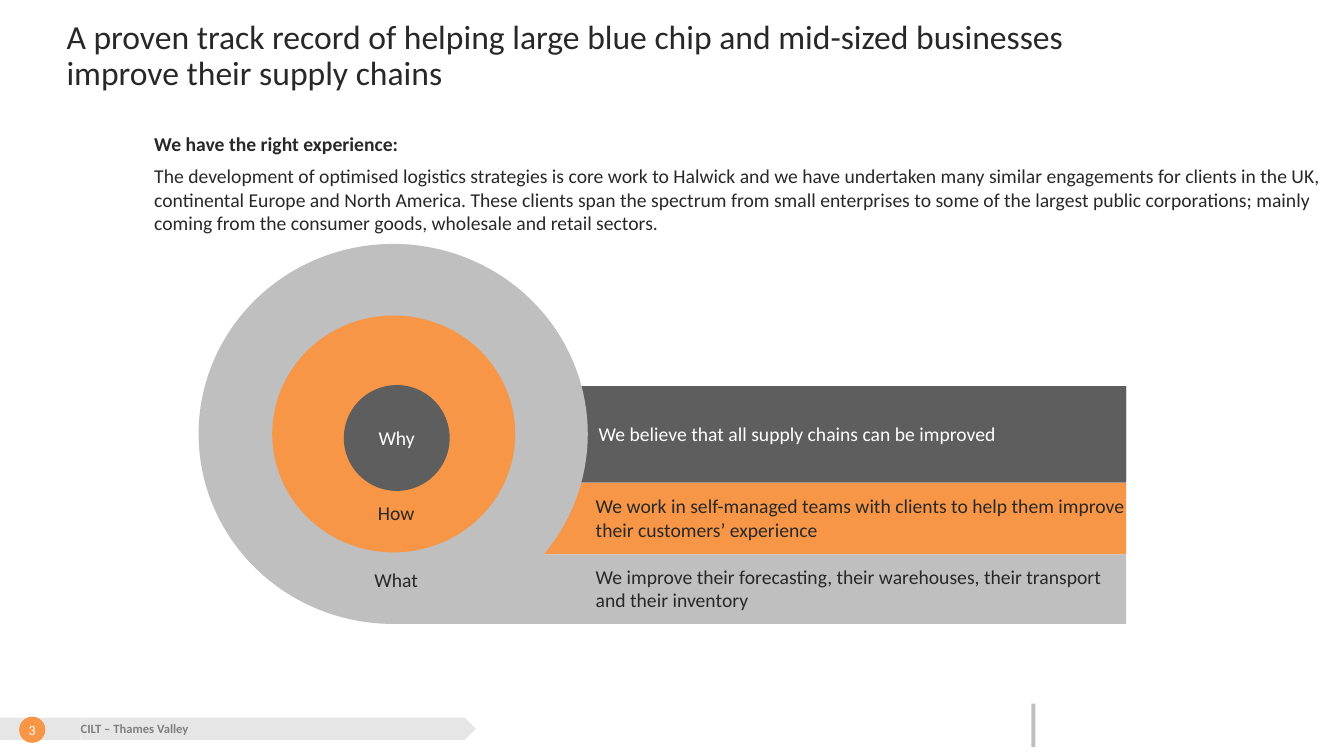
from dataclasses import dataclass
from pptx import Presentation
from pptx.dml.color import RGBColor
from pptx.enum.shapes import MSO_SHAPE
from pptx.enum.text import MSO_ANCHOR, MSO_AUTO_SIZE, PP_ALIGN
from pptx.util import Inches, Pt

RECT, OVAL, PLATE = MSO_SHAPE.RECTANGLE, MSO_SHAPE.OVAL, MSO_SHAPE.PENTAGON
TOP, MIDDLE = MSO_ANCHOR.TOP, MSO_ANCHOR.MIDDLE
LEFT, CENTER = PP_ALIGN.LEFT, PP_ALIGN.CENTER
FIXED = MSO_AUTO_SIZE.NONE


@dataclass(frozen=True)
class Theme:
    font: str = "Calibri"
    ink: str = "282828"
    white: str = "FFFFFF"
    dark: str = "5E5E5E"
    orange: str = "F79646"
    gray: str = "BFBFBF"
    pale: str = "E7E6E6"
    muted: str = "7F7F7F"
    title: int = 24
    body: int = 14
    page: int = 10
    foot: int = 9


THEME = Theme()


def style(para, size, color, bold=False, align=LEFT):
    para.alignment = align
    for run in para.runs:
        font = run.font
        font.name, font.size, font.bold = THEME.font, Pt(size), bold
        font.color.rgb = RGBColor.from_string(color)


def setup(frame, anchor=MIDDLE, inset=True):
    frame.word_wrap = True
    frame.auto_size = FIXED
    frame.vertical_anchor = anchor
    if not inset:
        frame.margin_left = frame.margin_right = 0
        frame.margin_top = frame.margin_bottom = 0


def write(item, text, color=THEME.ink, size=THEME.body, align=LEFT,
          bold=False, anchor=MIDDLE, inset=True):
    frame = item.text_frame
    setup(frame, anchor, inset)
    frame.text = text
    style(frame.paragraphs[0], size, color, bold, align)


def block(slide, kind, box, color):
    item = slide.shapes.add_shape(kind, *map(Inches, box))
    item.shadow.inherit = False
    item.fill.solid()
    item.fill.fore_color.rgb = RGBColor.from_string(color)
    item.line.fill.background()
    return item


def label(slide, box, text, **look):
    item = slide.shapes.add_textbox(*map(Inches, box))
    write(item, text, **look)


def footer(slide, box, text, page):
    x, y, w, h = box
    block(slide, RECT, (x + 10.23, y - 0.14, 0.04, 0.43), THEME.gray)
    block(slide, RECT, (x, y, 0.8, h), THEME.pale)
    block(slide, OVAL, (x + 0.19, y - 0.01, 0.26, 0.26), THEME.orange)
    plate = block(slide, PLATE, (x + 0.8, y, w - 0.8, h), THEME.pale)
    write(plate, text, THEME.muted, THEME.foot, bold=True, inset=False)
    plate.text_frame.word_wrap = False
    label(slide, (x + 0.09, y - 0.01, 0.46, 0.26), page,
          color=THEME.white, size=THEME.page, align=CENTER)


def heading(slide, box, text):
    title = slide.shapes.title
    title.left, title.top, title.width, title.height = map(Inches, box)
    write(title, text, size=THEME.title, anchor=TOP, inset=False)
    title.text_frame.paragraphs[0].line_spacing = 0.9


def intro(slide, box, lead, text):
    frame = slide.shapes.add_textbox(*map(Inches, box)).text_frame
    setup(frame, TOP, inset=False)
    frame.text = lead
    style(frame.paragraphs[0], THEME.body, THEME.ink, bold=True)
    para = frame.add_paragraph()
    para.text = text
    para.space_before = Pt(6)
    style(para, THEME.body, THEME.ink)


def circles(slide, box, rows):
    x, y, w, h = box
    start = x + 1.93
    tops = (1.41, 2.37, 3.08, h)
    fills = (THEME.dark, THEME.orange, THEME.gray)
    bands = list(zip(tops, tops[1:], fills))
    for top, end, fill in bands:
        block(slide, RECT, (start, y + top, x + w - start, end - top), fill)

    rings = ((0, 0, 3.86, h), (0.73, 0.71, 2.41, 2.35), (1.44, 1.4, 1.05, 1.05))
    for (dx, dy, wide, high), fill in zip(rings, reversed(fills)):
        core = block(slide, OVAL, (x + dx, y + dy, wide, high), fill)

    names, lines = zip(*rows)
    write(core, names[0], THEME.white, align=CENTER)
    for name, dy in zip(names[1:], (2.5, 3.16)):
        label(slide, (x + 1.41, y + dy, 1.1, 0.48), name,
              align=CENTER, anchor=TOP)

    panel = block(slide, RECT, (x + 3.87, y + tops[0], w - 3.87, 0.94), THEME.dark)
    write(panel, lines[0], THEME.white)
    for line, (top, end, fill) in zip(lines[1:], bands[1:]):
        label(slide, (x + 3.84, y + top - 0.01, 5.55, end - top), line)


def main():
    deck = Presentation()
    deck.slide_width, deck.slide_height = Inches(13.33), Inches(7.5)
    slide = deck.slides.add_slide(deck.slide_layouts[5])
    footer(slide, (0, 7.12, 4.72, 0.22), "CILT – Thames Valley", "3")
    heading(slide, (0.66, 0.2, 10.27, 0.76),
            "A proven track record of helping large blue chip and mid-sized "
            "businesses improve their supply chains")
    intro(slide, (1.53, 1.31, 11.8, 1.1), "We have the right experience:",
          "The development of optimised logistics strategies is core work to "
          "Halwick and we have undertaken many similar engagements for clients "
          "in the UK, continental Europe and North America. These clients span "
          "the spectrum from small enterprises to some of the largest public "
          "corporations; mainly coming from the consumer goods, wholesale and "
          "retail sectors.")
    circles(slide, (1.97, 2.42, 9.2, 3.77), (
        ("Why", "We believe that all supply chains can be improved"),
        ("How", "We work in self-managed teams with clients to help them "
                "improve their customers’ experience"),
        ("What", "We improve their forecasting, their warehouses, their "
                 "transport and their inventory"),
    ))
    deck.save("out.pptx")


if __name__ == "__main__":
    main()
